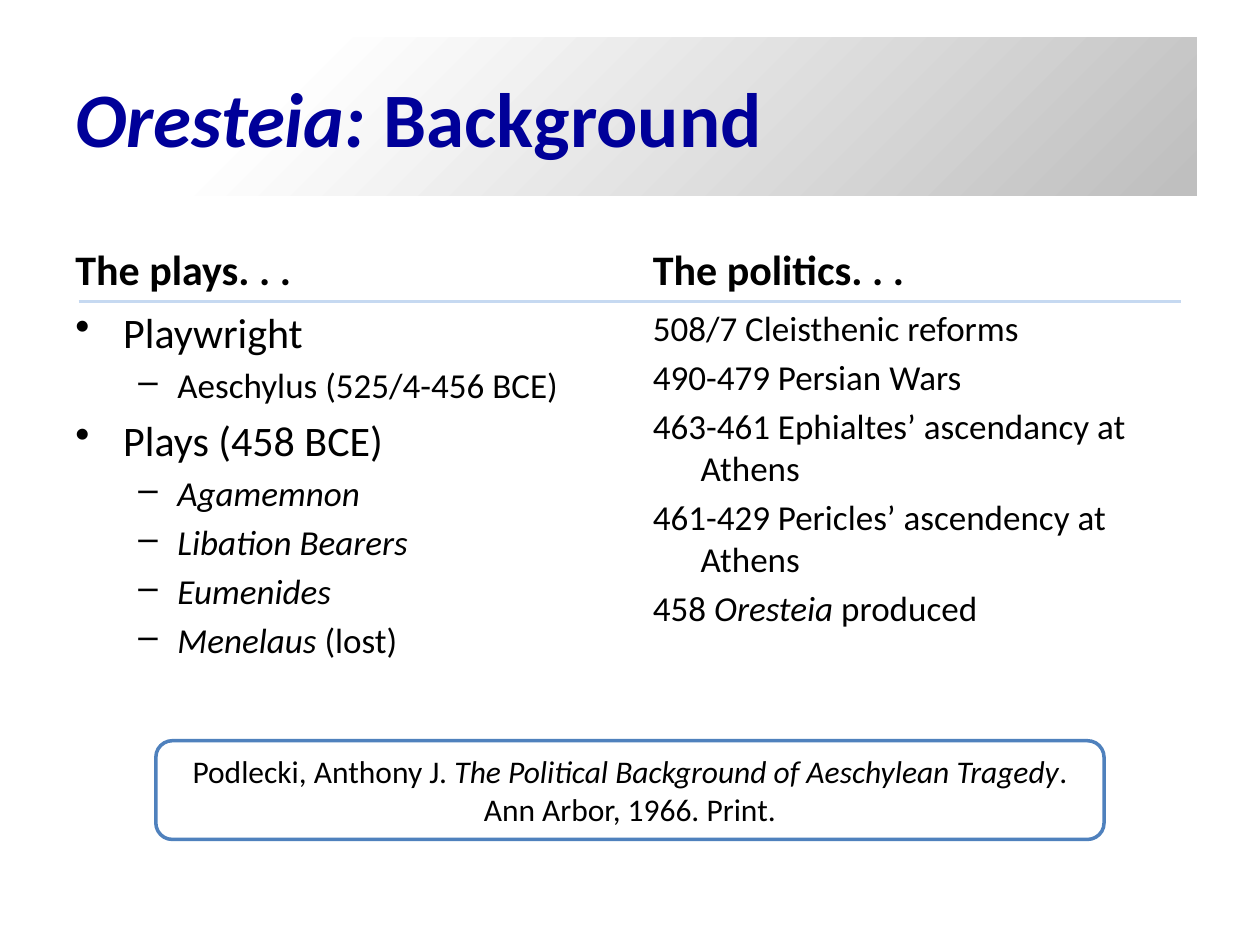
from lxml.etree import SubElement
from pptx import Presentation
from pptx.dml.color import RGBColor
from pptx.enum.shapes import MSO_CONNECTOR, MSO_SHAPE
from pptx.enum.text import MSO_ANCHOR, PP_ALIGN
from pptx.oxml.ns import qn
from pptx.util import Inches, Pt

NAVY = RGBColor(0x00, 0x00, 0x99)
BLACK = RGBColor(0x00, 0x00, 0x00)
WHITE = RGBColor(0xFF, 0xFF, 0xFF)
GRAY = RGBColor(0xBF, 0xBF, 0xBF)
BLUE = RGBColor(0x4F, 0x81, 0xBD)
PALE_BLUE = RGBColor(0xC6, 0xD9, 0xF1)

COLUMNS, ROWS = 120, 90  # grid of the whole slide
LEFT, RIGHT, COLUMN_WIDTH = 6, 61, 53
HEADING_TOP, LIST_TOP = 20.2, 28.6

# Paragraph levels: (font size, left margin, first-line indent, bullet)
MAIN = (24, 0.38, -0.38, "•")
SUB = (20, 0.81, -0.31, "–")
EVENT = (20, 0.38, -0.38, None)


class SlideBuilder:
    font = "Calibri"

    def __init__(self, presentation):
        self.slide = presentation.slides.add_slide(presentation.slide_layouts[6])
        self.cell_width = presentation.slide_width / COLUMNS
        self.cell_height = presentation.slide_height / ROWS

    def place(self, column, row, columns, rows):
        return (round(column * self.cell_width), round(row * self.cell_height),
                round(columns * self.cell_width), round(rows * self.cell_height))

    def add_pieces(self, paragraph, pieces, size, color=BLACK, bold=False):
        """Fill a paragraph with (text, italic) pieces."""
        for text, italic in pieces:
            run = paragraph.add_run()
            run.text = text
            font = run.font
            font.name, font.size, font.bold, font.italic = self.font, Pt(size), bold, italic
            font.color.rgb = color

    def text_box(self, area, anchor):
        frame = self.slide.shapes.add_textbox(*self.place(*area)).text_frame
        frame.word_wrap = True
        frame.vertical_anchor = anchor
        return frame

    def heading(self, column, text):
        frame = self.text_box((column, HEADING_TOP, COLUMN_WIDTH, 8.4), MSO_ANCHOR.BOTTOM)
        self.add_pieces(frame.paragraphs[0], [(text, False)], 24, bold=True)

    def item_list(self, column, items):
        frame = self.text_box((column, LIST_TOP, COLUMN_WIDTH, 43.8), MSO_ANCHOR.TOP)
        for index, ((size, margin, indent, bullet), *pieces) in enumerate(items):
            paragraph = frame.add_paragraph() if index else frame.paragraphs[0]
            paragraph.space_before = Pt(size * 0.2)
            properties = paragraph._p.get_or_add_pPr()
            properties.set("marL", str(Inches(margin)))
            properties.set("indent", str(Inches(indent)))
            if bullet:
                SubElement(properties, qn("a:buChar")).set("char", bullet)
            self.add_pieces(paragraph, pieces, size)

    def panel(self, kind, area, align):
        shape = self.slide.shapes.add_shape(kind, *self.place(*area))
        shape.shadow.inherit = False
        frame = shape.text_frame
        frame.word_wrap = True
        frame.vertical_anchor = MSO_ANCHOR.MIDDLE
        frame.paragraphs[0].alignment = align
        return shape

    def title(self, area, pieces):
        banner = self.panel(MSO_SHAPE.RECTANGLE, area, PP_ALIGN.LEFT)
        banner.line.fill.background()
        banner.fill.gradient()
        banner.fill.gradient_angle = 315
        stops = zip(banner.fill.gradient_stops, ((0.2, WHITE), (0.99, GRAY)))
        for stop, (position, color) in stops:
            stop.position = position
            stop.color.rgb = color
        self.add_pieces(banner.text_frame.paragraphs[0], pieces, 44, NAVY, bold=True)

    def citation(self, area, pieces):
        box = self.panel(MSO_SHAPE.ROUNDED_RECTANGLE, area, PP_ALIGN.CENTER)
        box.fill.solid()
        box.fill.fore_color.rgb = WHITE
        box.line.color.rgb = BLUE
        box.line.width = Pt(2)
        self.add_pieces(box.text_frame.paragraphs[0], pieces, 18)

    def rule(self, column, row, columns):
        x, y, width, _ = self.place(column, row, columns, 0)
        line = self.slide.shapes.add_connector(MSO_CONNECTOR.STRAIGHT, x, y, x + width, y)
        line.line.color.rgb = PALE_BLUE
        line.line.width = Pt(2)
        SubElement(line._element.spPr, qn("a:effectLst"))


def main():
    presentation = Presentation()
    presentation.slide_width, presentation.slide_height = Inches(10), Inches(7.5)
    builder = SlideBuilder(presentation)

    # Title banner and rule under the headings
    builder.rule(7.5, 28.7, 105)
    builder.title((6, 3.6, 108, 15), [("Oresteia:", True), (" Background", False)])

    # Left column: the plays
    builder.heading(LEFT, "The plays. . .")
    builder.item_list(LEFT, [
        (MAIN, ("Playwright", False)),
        (SUB, ("Aeschylus (525/4-456 BCE)", False)),
        (MAIN, ("Plays (458 BCE)", False)),
        (SUB, ("Agamemnon", True)),
        (SUB, ("Libation Bearers", True)),
        (SUB, ("Eumenides", True)),
        (SUB, ("Menelaus", True), (" (lost)", False)),
    ])

    # Right column: the politics
    builder.heading(RIGHT, "The politics. . .")
    builder.item_list(RIGHT, [
        (EVENT, ("508/7 Cleisthenic reforms", False)),
        (EVENT, ("490-479 Persian Wars", False)),
        (EVENT, ("463-461 Ephialtes’ ascendancy at Athens", False)),
        (EVENT, ("461-429 Pericles’ ascendency at Athens", False)),
        (EVENT, ("458 ", False), ("Oresteia", True), (" produced", False)),
    ])

    # Source
    builder.citation((14.85, 70.55, 90.3, 9.4), [
        ("Podlecki, Anthony J. ", False),
        ("The Political Background of Aeschylean Tragedy", True),
        (". Ann Arbor, 1966. Print.", False),
    ])

    presentation.save("out.pptx")


if __name__ == "__main__":
    main()
